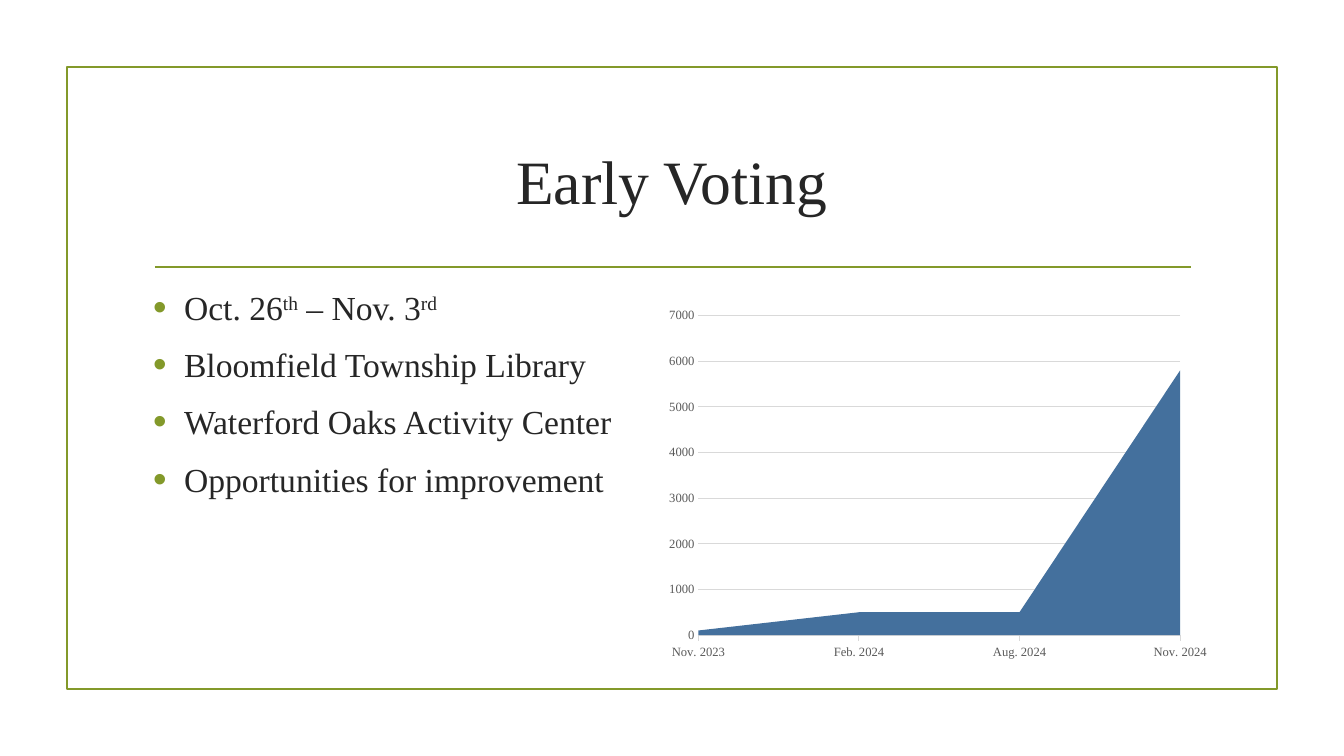
from lxml.etree import SubElement
from pptx import Presentation
from pptx.chart.data import CategoryChartData
from pptx.dml.color import RGBColor
from pptx.enum.chart import XL_CHART_TYPE as ChartType, XL_TICK_MARK as TickMark
from pptx.enum.shapes import MSO_CONNECTOR as Connector, MSO_SHAPE as Shape
from pptx.enum.text import MSO_ANCHOR as Anchor, MSO_AUTO_SIZE as AutoSize, PP_ALIGN as Align
from pptx.oxml.ns import qn
from pptx.util import Emu, Pt

FONT = "Times New Roman"
GREEN, INK, GREY, PALE, BLUE = "83992A", "262626", "595959", "D9D9D9", "44709D"
SLIDE_WIDTH, SLIDE_HEIGHT = 1344, 756
EMU_PER_PX = 12192000 / SLIDE_WIDTH

# Each bullet is a list of (text, superscript) pieces
BULLETS = [
    [("Oct. 26", False), ("th", True), (" – Nov. 3", False), ("rd", True)],
    [("Bloomfield Township Library", False)],
    [("Waterford Oaks Activity Center", False)],
    [("Opportunities for improvement", False)],
]
VOTES = {"Nov. 2023": 100, "Feb. 2024": 500, "Aug. 2024": 500, "Nov. 2024": 5800}


def px(length):
    return Emu(round(length * EMU_PER_PX))


def color(value):
    return RGBColor.from_string(value)


def set_line(line, value, width):
    line.color.rgb = color(value)
    line.width = Pt(width)


def set_font(font, size, value):
    font.name, font.size = FONT, Pt(size)
    font.color.rgb = color(value)


def add_text(paragraph, text, size=24, value=INK, superscript=False):
    run = paragraph.add_run()
    run.text = text
    set_font(run.font, size, value)
    if superscript:
        run._r.get_or_add_rPr().set("baseline", "30000")


def place(shape, box):
    shape.left, shape.top, shape.width, shape.height = map(px, box)


def add_bullet(paragraph):
    properties = paragraph._p.get_or_add_pPr()
    properties.set("marL", str(px(31)))
    properties.set("indent", str(px(-31)))
    bullet_color = SubElement(properties, qn("a:buClr"))
    SubElement(bullet_color, qn("a:srgbClr"), val=GREEN)
    SubElement(properties, qn("a:buSzPct"), val="115000")
    SubElement(properties, qn("a:buFont"), typeface="Arial")
    SubElement(properties, qn("a:buChar"), char="•")


def draw_frame(slide, box):
    left, top, width, height = box
    frame = slide.shapes.add_shape(Shape.RECTANGLE, *map(px, box))
    frame.shadow.inherit = False
    frame.fill.background()
    set_line(frame.line, GREEN, 1.25)

    # Rule under the title
    ends = (left + 88, top + 200, left + width - 86, top + 200)
    rule = slide.shapes.add_connector(Connector.STRAIGHT, *map(px, ends))
    set_line(rule.line, GREEN, 1.25)
    SubElement(rule._element.spPr, qn("a:effectLst"))


def fill_title(title, box):
    place(title, box)
    frame = title.text_frame
    frame.auto_size, frame.vertical_anchor = AutoSize.NONE, Anchor.MIDDLE
    paragraph = frame.paragraphs[0]
    paragraph.alignment = Align.CENTER
    add_text(paragraph, "Early Voting", size=44)


def fill_list(body, box):
    place(body, box)
    frame = body.text_frame
    frame.auto_size, frame.vertical_anchor = AutoSize.NONE, Anchor.TOP
    for index, pieces in enumerate(BULLETS):
        paragraph = frame.add_paragraph() if index else frame.paragraphs[0]
        paragraph.space_before = Pt(6 if index else 0)
        paragraph.space_after = Pt(6)
        add_bullet(paragraph)
        for text, superscript in pieces:
            add_text(paragraph, text, superscript=superscript)


def draw_chart(slide, box):
    data = CategoryChartData()
    data.categories = list(VOTES)
    data.add_series("Series 1", list(VOTES.values()))
    chart = slide.shapes.add_chart(ChartType.AREA, *map(px, box), data).chart
    chart.has_title = chart.has_legend = False
    set_font(chart.font, 10, "000000")

    plot = chart.plots[0]
    plot.vary_by_categories = False
    area = plot.series[0].format
    area.fill.solid()
    area.fill.fore_color.rgb = color(BLUE)
    area.line.fill.background()

    # Axes
    months, votes = chart.category_axis, chart.value_axis
    for axis in (months, votes):
        set_font(axis.tick_labels.font, 9, GREY)
        axis.minor_tick_mark = TickMark.NONE
    months.has_major_gridlines = False
    months.major_tick_mark = TickMark.OUTSIDE
    set_line(months.format.line, PALE, 0.75)
    votes.minimum_scale, votes.maximum_scale, votes.major_unit = 0, 7000, 1000
    votes.major_tick_mark = TickMark.NONE
    votes.format.line.fill.background()
    votes.has_major_gridlines = True
    set_line(votes.major_gridlines.format.line, PALE, 0.75)


def main():
    presentation = Presentation()
    presentation.slide_width, presentation.slide_height = px(SLIDE_WIDTH), px(SLIDE_HEIGHT)
    slide = presentation.slides.add_slide(presentation.slide_layouts[1])
    draw_frame(slide, (67, 67, 1210, 622))
    fill_title(slide.shapes.title, (143, 108, 1058, 144))
    fill_list(slide.placeholders[1], (143, 282, 1058, 366))
    draw_chart(slide, (658, 301, 560, 366))
    presentation.save("out.pptx")


if __name__ == "__main__":
    main()
